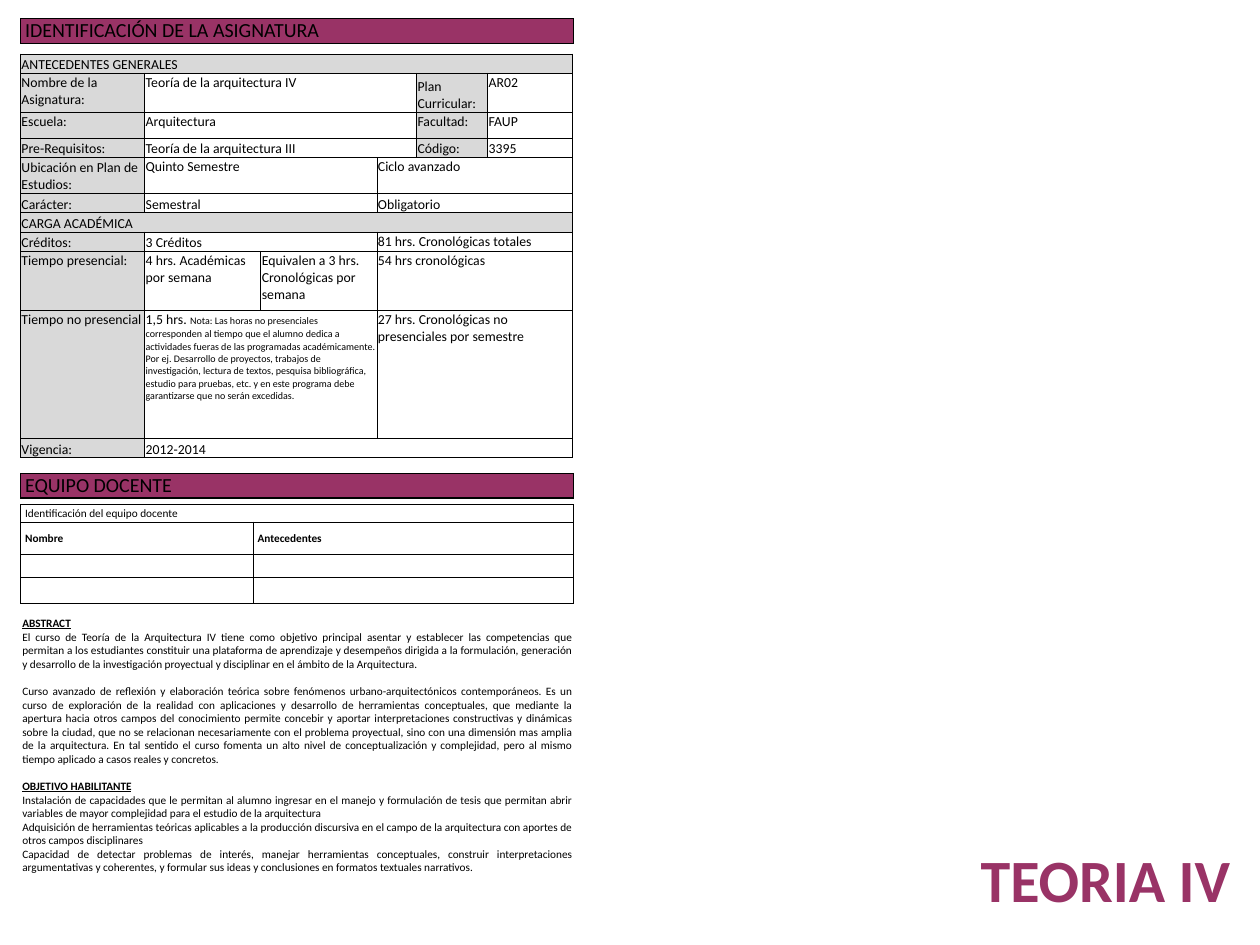
from itertools import accumulate

from lxml.etree import SubElement
from pptx import Presentation
from pptx.dml.color import RGBColor
from pptx.enum.text import MSO_ANCHOR as Anchor, MSO_AUTO_SIZE as AutoSize, PP_ALIGN as Align
from pptx.oxml.ns import qn
from pptx.util import Pt

COLORS = {"plum": "993366", "grey": "D9D9D9", "ink": "000000"}
FONT = "Calibri"
TOP, MIDDLE, BOTTOM = Anchor.TOP, Anchor.MIDDLE, Anchor.BOTTOM
WIDE_INSETS = (3.6, 0, 3.6, 0)
TIGHT_INSETS = (0.7, 0.7, 0.7, 0)

COURSE_COLUMNS = [99.4, 92.9, 92.9, 31.7, 56.9, 67.6]
NOTE = (
    "Nota: Las horas no presenciales corresponden al tiempo que el alumno dedica a actividades "
    "fueras de las programadas académicamente. Por ej. Desarrollo de proyectos, trabajos de "
    "investigación, lectura de textos, pesquisa bibliográfica, estudio para pruebas, etc. y en "
    "este programa debe garantizarse que no serán excedidas."
)
COURSE_ROWS = [
    (15.4, [(0, "ANTECEDENTES GENERALES", BOTTOM)]),
    (31.2, [(0, "Nombre de la Asignatura:", TOP), (1, "Teoría de la arquitectura IV", TOP),
            (4, "Plan Curricular:", BOTTOM), (5, "AR02", TOP)]),
    (20.8, [(0, "Escuela:", TOP), (1, "Arquitectura", TOP), (4, "Facultad:", TOP), (5, "FAUP", TOP)]),
    (15.4, [(0, "Pre-Requisitos:", BOTTOM), (1, "Teoría de la arquitectura III", BOTTOM),
            (4, "Código:", BOTTOM), (5, "3395", BOTTOM)]),
    (28.8, [(0, "Ubicación en Plan de Estudios:", BOTTOM), (1, "Quinto Semestre", TOP),
            (3, "Ciclo avanzado", TOP)]),
    (15.4, [(0, "Carácter:", BOTTOM), (1, "Semestral", BOTTOM), (3, "Obligatorio", BOTTOM)]),
    (15.4, [(0, "CARGA ACADÉMICA", BOTTOM)]),
    (15.4, [(0, "Créditos:", BOTTOM), (1, "3 Créditos", BOTTOM),
            (3, "81 hrs. Cronológicas totales", TOP)]),
    (47.2, [(0, "Tiempo presencial:", TOP), (1, "4 hrs. Académicas por semana", TOP),
            (2, "Equivalen a 3 hrs. Cronológicas por semana", TOP), (3, "54 hrs cronológicas", TOP)]),
    (102.6, [(0, "Tiempo no presencial", TOP), (1, "1,5 hrs. ", TOP),
             (3, "27 hrs. Cronológicas no presenciales por semestre", TOP)]),
    (15.4, [(0, "Vigencia:", BOTTOM), (1, "2012-2014", BOTTOM)]),
]
NOTE_CELL = (9, 1)

TEAM_COLUMNS = [186, 256]
TEAM_ROWS = [
    (14, [(0, "Identificación del equipo docente", MIDDLE)]),
    (25.6, [(0, "Nombre", MIDDLE), (1, "Antecedentes", MIDDLE)]),
    (18.9, [(0, "", TOP), (1, "", TOP)]),
    (20.7, [(0, "", TOP), (1, "", TOP)]),
]

SUMMARY = [
    ("ABSTRACT", [
        "El curso de Teoría de la Arquitectura IV tiene como objetivo principal asentar y establecer "
        "las competencias que permitan a los estudiantes constituir una plataforma de aprendizaje y "
        "desempeños dirigida a la formulación, generación y desarrollo de la investigación proyectual "
        "y disciplinar en el ámbito de la Arquitectura.",
        "Curso avanzado de reflexión y elaboración teórica sobre fenómenos urbano-arquitectónicos "
        "contemporáneos. Es un curso de exploración de la realidad con aplicaciones y desarrollo de "
        "herramientas conceptuales, que mediante la apertura hacia otros campos del conocimiento "
        "permite concebir y aportar interpretaciones constructivas y dinámicas sobre la ciudad, que "
        "no se relacionan necesariamente con el problema proyectual, sino con una dimensión mas "
        "amplia de la arquitectura. En tal sentido el curso fomenta un alto nivel de "
        "conceptualización y complejidad, pero al mismo tiempo aplicado a casos reales y concretos.",
    ], 11),
    ("OBJETIVO HABILITANTE", [
        "Instalación de capacidades que le permitan al alumno ingresar en el manejo y formulación de "
        "tesis que permitan abrir variables de mayor complejidad para el estudio de la arquitectura",
        "Adquisición de herramientas teóricas aplicables a la producción discursiva en el campo de la "
        "arquitectura con aportes de otros campos disciplinares",
        "Capacidad de detectar problemas de interés, manejar herramientas conceptuales, construir "
        "interpretaciones argumentativas y coherentes, y formular sus ideas y conclusiones en "
        "formatos textuales narrativos.",
    ], 0),
]


def style_text(paragraph, size, color="ink", bold=False):
    font = paragraph.font
    font.name, font.size, font.bold = FONT, Pt(size), bold
    font.color.rgb = RGBColor.from_string(COLORS[color])


def style_cell(cell, insets, fill=None):
    properties = cell._tc.get_or_add_tcPr()
    for side in ("a:lnL", "a:lnR", "a:lnT", "a:lnB"):
        border = SubElement(properties, qn(side), w=str(Pt(1)))
        SubElement(SubElement(border, qn("a:solidFill")), qn("a:srgbClr"), val=COLORS["ink"])
    if fill:
        cell.fill.solid()
        cell.fill.fore_color.rgb = RGBColor.from_string(COLORS[fill])
    else:
        cell.fill.background()
    cell.margin_left, cell.margin_top, cell.margin_right, cell.margin_bottom = map(Pt, insets)


def add_grid(slide, box, columns, rows, size, insets, fills):
    left, top = box
    heights = [height for height, _ in rows]
    grid = slide.shapes.add_table(len(rows), len(columns), Pt(left), Pt(top),
                                  Pt(sum(columns)), Pt(sum(heights))).table
    grid.first_row = grid.horz_banding = False
    for column, width in zip(grid.columns, columns):
        column.width = Pt(width)
    for index, (height, entries) in enumerate(rows):
        grid.rows[index].height = Pt(height)
        ends = [start for start, _, _ in entries[1:]] + [len(columns)]
        for (start, text, anchor), end in zip(entries, ends):
            for position in range(start, end):
                style_cell(grid.cell(index, position), insets, fills.get(start))
            cell = grid.cell(index, start)
            if end - start > 1:
                cell.merge(grid.cell(index, end - 1))
            cell.vertical_anchor = anchor
            paragraph = cell.text_frame.paragraphs[0]
            style_text(paragraph, size)
            if text:
                paragraph.add_run().text = text
            else:
                SubElement(paragraph._p, qn("a:endParaRPr"), sz=str(size * 100))
    return grid


def add_banner(slide, box, text):
    add_grid(slide, box, [442], [(19.5, [(0, text, TOP)])], 16, WIDE_INSETS, {0: "plum"})


def add_course_table(slide, box):
    grid = add_grid(slide, box, COURSE_COLUMNS, COURSE_ROWS, 11, TIGHT_INSETS, {0: "grey", 4: "grey"})
    note = grid.cell(*NOTE_CELL).text_frame.paragraphs[0].add_run()
    note.text = NOTE
    note.font.size = Pt(8)


def add_team_table(slide, box):
    grid = add_grid(slide, box, TEAM_COLUMNS, TEAM_ROWS, 9, WIDE_INSETS, {})
    for position in range(len(TEAM_COLUMNS)):
        grid.cell(1, position).text_frame.paragraphs[0].font.bold = True


def add_text_frame(slide, box):
    frame = slide.shapes.add_textbox(*map(Pt, box)).text_frame
    frame.word_wrap = True
    frame.auto_size = AutoSize.SHAPE_TO_FIT_TEXT
    return frame


def add_summary(slide, box):
    frame = add_text_frame(slide, box)
    paragraph = frame.paragraphs[0]
    for section, (heading, bodies, gap) in enumerate(SUMMARY):
        if section:
            paragraph = frame.add_paragraph()
            paragraph.space_before = Pt(11)
        paragraph.text = heading
        paragraph.alignment = Align.JUSTIFY
        style_text(paragraph, 9, bold=True)
        paragraph.font.underline = True
        for order, body in enumerate(bodies):
            paragraph = frame.add_paragraph()
            paragraph.text = body
            paragraph.alignment = Align.JUSTIFY
            paragraph.space_before = Pt(gap if order else 0)
            style_text(paragraph, 9)


def add_course_title(slide, box):
    title = add_text_frame(slide, box).paragraphs[0]
    title.text = "TEORIA IV"
    title.alignment = Align.RIGHT
    style_text(title, 48, "plum", bold=True)


def main():
    deck = Presentation()
    deck.slide_width, deck.slide_height = Pt(1008), Pt(756)
    slide = deck.slides.add_slide(deck.slide_layouts[6])
    left = 16.5
    add_banner(slide, (left, 15), "IDENTIFICACIÓN DE LA ASIGNATURA")
    add_course_table(slide, (left, 43.4))
    add_banner(slide, (left, 378.8), "EQUIPO DOCENTE")
    add_team_table(slide, (left, 403.8))
    add_summary(slide, (10.8, 489.6, 453.6, 214.6))
    add_course_title(slide, (543.6, 670.3, 447.8, 65.5))
    deck.save("out.pptx")


if __name__ == "__main__":
    main()
